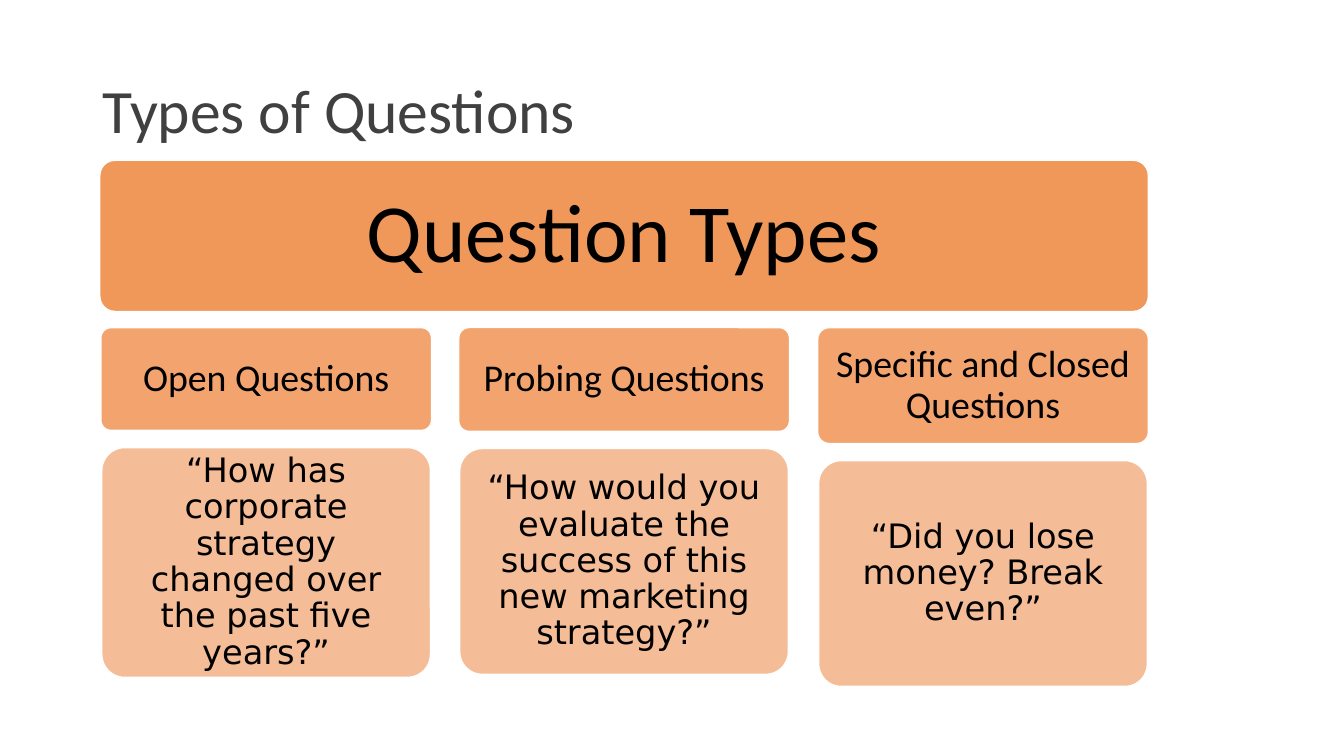
from lxml import etree
from pptx import Presentation
from pptx import util as u
from pptx.dml.color import RGBColor
from pptx.enum import shapes, text
from pptx.oxml.ns import qn

EMU_PER_PX = 9144
COLORS = {"title": "404041", "text": "000000", "card": "ED7D31", "edge": "FFFFFF"}
QUESTION_TYPES = [
    ("Open Questions", 102, 228,
     "“How has corporate strategy changed over the past five years?”"),
    ("Probing Questions", 103, 224,
     "“How would you evaluate the success of this new marketing strategy?”"),
    ("Specific and Closed Questions", 115, 224,
     "“Did you lose money? Break even?”"),
]


def px(length):
    return u.Emu(length * EMU_PER_PX)


class QuestionSlide:
    """Hold the deck's style and current slide, and draw its elements."""

    def __init__(self, deck):
        self.slide = deck.slides.add_slide(deck.slide_layouts[5])

    def set_text(self, box, words, size, font, color, align):
        frame = box.text_frame
        frame.text = words
        frame.word_wrap = True
        frame.auto_size = text.MSO_AUTO_SIZE.NONE
        frame.vertical_anchor = text.MSO_ANCHOR.MIDDLE
        para = frame.paragraphs[0]
        para.alignment = align
        para.line_spacing = 0.9
        para.font.size = u.Pt(size)
        para.font.name = font
        para.font.color.rgb = RGBColor.from_string(COLORS[color])
        return frame

    def title(self, words, left, top, width, height):
        box = self.slide.shapes.title
        box.left, box.top, box.width, box.height = map(px, (left, top, width, height))
        self.set_text(box, words, 44, "Calibri", "title", text.PP_ALIGN.LEFT)

    def card(self, words, left, top, width, height, opacity, size, inset, font="Calibri"):
        box = self.slide.shapes.add_shape(
            shapes.MSO_SHAPE.ROUNDED_RECTANGLE, *map(px, (left, top, width, height)))
        box.adjustments[0] = 0.1
        box.shadow.inherit = False
        box.fill.solid()
        box.fill.fore_color.rgb = RGBColor.from_string(COLORS["card"])
        fill_color = next(box.element.spPr.iter(qn("a:srgbClr")))
        etree.SubElement(fill_color, qn("a:alpha"), val=str(opacity * 1000))
        box.line.color.rgb = RGBColor.from_string(COLORS["edge"])
        box.line.width = u.Pt(1)
        frame = self.set_text(box, words, size, font, "text", text.PP_ALIGN.CENTER)
        frame.margin_left = frame.margin_right = px(inset)
        frame.margin_top = frame.margin_bottom = px(inset)


def main():
    deck = Presentation()
    deck.slide_width, deck.slide_height = px(1333), px(750)
    page = QuestionSlide(deck)
    page.title("Types of Questions", 92, 40, 1150, 145)
    page.card("Question Types", 99, 159, 1040, 150, 80, 59, 30)
    gap = 17
    for index, (heading, heading_height, example_height, example) in enumerate(QUESTION_TYPES):
        left, top = 100 + index * 711 // 2, 325
        page.card(heading, left, top, 328, heading_height, 70, 27, 14)
        page.card(example, left + 1, top + heading_height + gap, 326, example_height,
                  50, 24, 16, "DejaVu Sans")
    deck.save("out.pptx")


if __name__ == "__main__":
    main()
